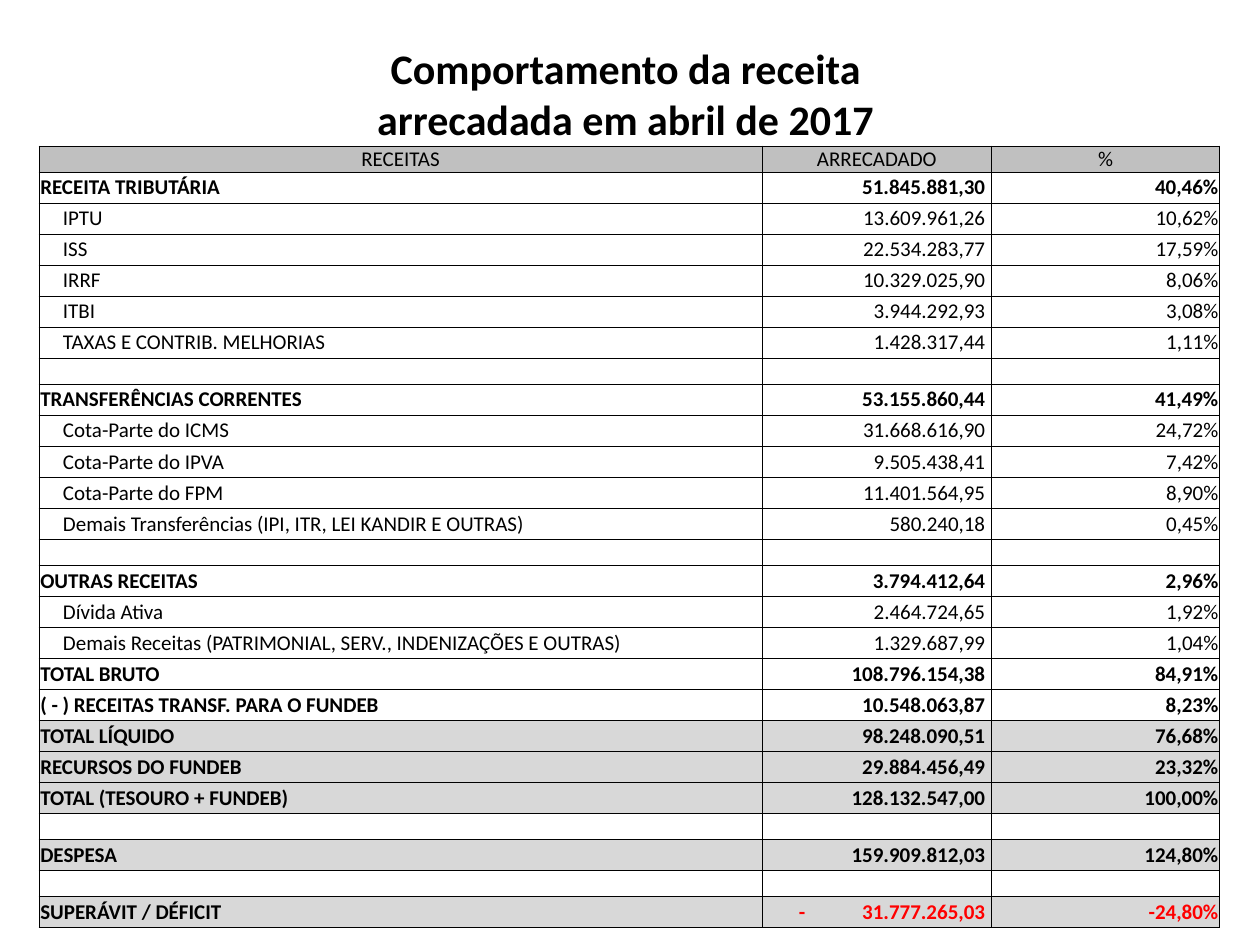
from enum import Enum
from typing import NamedTuple

from lxml.etree import SubElement as Sub
from pptx import Presentation
from pptx.dml.color import RGBColor
from pptx.enum.text import MSO_ANCHOR as Anchor, MSO_AUTO_SIZE as Fit, PP_ALIGN as Align
from pptx.oxml.ns import qn
from pptx.util import Inches, Pt

FONT = "Calibri"
BLACK, RED, GREY, PALE = "000000", "FF0000", "C0C0C0", "D8D8D8"
WIDE, TALL = 10, 7.5
LEFT, TOP, HIGH = 0.31, 1.16, 6.21
COLS = (5.74, 1.82, 1.81)
INSET, INDENT, PAD = 0.01, 0.19, 0.05
MINUS, STOP = 0.29, 1.48


class Kind(Enum):
    """Role of a row: fill, bold, label indent and height in grid units."""

    HEAD = (GREY, False, INSET, 5)
    MAIN = (None, True, INSET, 6)
    ITEM = (None, False, INDENT, 6)
    SUM = (PALE, True, INSET, 6)
    GAP = (None, False, INSET, 5)


class Row(NamedTuple):
    """One line of the revenue table."""

    kind: Kind
    label: str = ""
    value: str = ""
    share: str = ""
    color: str = BLACK


HEAD, MAIN, ITEM, SUM = Kind.HEAD, Kind.MAIN, Kind.ITEM, Kind.SUM
GAP = Row(Kind.GAP)
ROWS = (
    Row(HEAD, "RECEITAS", "ARRECADADO", "%"),
    Row(MAIN, "RECEITA TRIBUTÁRIA", "51.845.881,30", "40,46%"),
    Row(ITEM, "IPTU", "13.609.961,26", "10,62%"),
    Row(ITEM, "ISS", "22.534.283,77", "17,59%"),
    Row(ITEM, "IRRF", "10.329.025,90", "8,06%"),
    Row(ITEM, "ITBI", "3.944.292,93", "3,08%"),
    Row(ITEM, "TAXAS E CONTRIB. MELHORIAS", "1.428.317,44", "1,11%"),
    GAP,
    Row(MAIN, "TRANSFERÊNCIAS CORRENTES", "53.155.860,44", "41,49%"),
    Row(ITEM, "Cota-Parte do ICMS", "31.668.616,90", "24,72%"),
    Row(ITEM, "Cota-Parte do IPVA", "9.505.438,41", "7,42%"),
    Row(ITEM, "Cota-Parte do FPM", "11.401.564,95", "8,90%"),
    Row(ITEM, "Demais Transferências (IPI, ITR, LEI KANDIR E OUTRAS)", "580.240,18", "0,45%"),
    GAP,
    Row(MAIN, "OUTRAS RECEITAS", "3.794.412,64", "2,96%"),
    Row(ITEM, "Dívida Ativa", "2.464.724,65", "1,92%"),
    Row(ITEM, "Demais Receitas (PATRIMONIAL, SERV., INDENIZAÇÕES E OUTRAS)", "1.329.687,99", "1,04%"),
    Row(MAIN, "TOTAL BRUTO", "108.796.154,38", "84,91%"),
    Row(MAIN, "( - ) RECEITAS TRANSF. PARA O FUNDEB", "10.548.063,87", "8,23%"),
    Row(SUM, "TOTAL LÍQUIDO", "98.248.090,51", "76,68%"),
    Row(SUM, "RECURSOS DO FUNDEB", "29.884.456,49", "23,32%"),
    Row(SUM, "TOTAL (TESOURO + FUNDEB)", "128.132.547,00", "100,00%"),
    GAP,
    Row(SUM, "DESPESA", "159.909.812,03", "124,80%"),
    GAP,
    Row(SUM, "SUPERÁVIT / DÉFICIT", "-\t31.777.265,03", "-24,80%", RED),
)


def paint(hue: str) -> RGBColor:
    """Turn a hex string into a colour."""
    return RGBColor.from_string(hue)


def style(para, size: float, bold: bool, hue: str, align: Align) -> None:
    """Set the font and alignment of a paragraph."""
    font = para.font
    font.name, font.size, font.bold = FONT, Pt(size), bold
    font.color.rgb = paint(hue)
    para.alignment = align


def frame(cell) -> None:
    """Draw a thin black border on the four sides of a cell."""
    props = cell._tc.get_or_add_tcPr()
    for at, side in enumerate(("lnL", "lnR", "lnT", "lnB")):
        line = Sub(props, qn(f"a:{side}"), w=str(Pt(0.5)))
        Sub(Sub(line, qn("a:solidFill")), qn("a:srgbClr"), val=BLACK)
        props.insert(at, line)


def add_stop(para) -> None:
    """Give a paragraph a right tab stop, so that its sign stays at the left."""
    tabs = Sub(para._p.get_or_add_pPr(), qn("a:tabLst"))
    Sub(tabs, qn("a:tab"), pos=str(Inches(STOP)), algn="r")


def fill_cell(cell, row: Row, col: int) -> None:
    """Write and format one cell of the table."""
    back, bold, indent, _ = row.kind.value
    text = (row.label, row.value, row.share)[col]
    split = "\t" in text
    if back:
        cell.fill.solid()
        cell.fill.fore_color.rgb = paint(back)
    else:
        cell.fill.background()
    frame(cell)
    cell.vertical_anchor = Anchor.MIDDLE
    cell.margin_top = cell.margin_bottom = 0
    cell.margin_left = Inches(MINUS if split else indent if col == 0 else INSET)
    padded = col == 1 and row.kind is not HEAD and not split
    cell.margin_right = Inches(PAD if padded else INSET)
    para = cell.text_frame.paragraphs[0]
    if text:
        para.add_run().text = text
    align = Align.LEFT if col == 0 or split else Align.RIGHT
    style(para, 12, bold, row.color if col else BLACK, Align.CENTER if row.kind is HEAD else align)
    if split:
        add_stop(para)


def add_title(slide) -> None:
    """Place the heading above the table."""
    box = slide.shapes.add_textbox(*map(Inches, (2.72, 0.29, 4.49, 0.91)))
    body = box.text_frame
    body.word_wrap, body.auto_size = True, Fit.SHAPE_TO_FIT_TEXT
    para = body.paragraphs[0]
    para.add_run().text = "Comportamento da receita arrecadada em abril de 2017"
    style(para, 24, True, BLACK, Align.CENTER)


def add_grid(slide) -> None:
    """Place the revenue table."""
    place = map(Inches, (LEFT, TOP, sum(COLS), HIGH))
    grid = slide.shapes.add_table(len(ROWS), len(COLS), *place).table
    grid.first_row = grid.horz_banding = False
    for col, wide in zip(grid.columns, COLS):
        col.width = Inches(wide)
    unit = HIGH / sum(row.kind.value[3] for row in ROWS)
    for line, row in zip(grid.rows, ROWS):
        line.height = Inches(unit * row.kind.value[3])
        for col, cell in enumerate(line.cells):
            fill_cell(cell, row, col)


def main() -> None:
    """Build the slide and save it."""
    deck = Presentation()
    deck.slide_width, deck.slide_height = Inches(WIDE), Inches(TALL)
    slide = deck.slides.add_slide(deck.slide_layouts[6])
    add_title(slide)
    add_grid(slide)
    deck.save("out.pptx")


if __name__ == "__main__":
    main()
